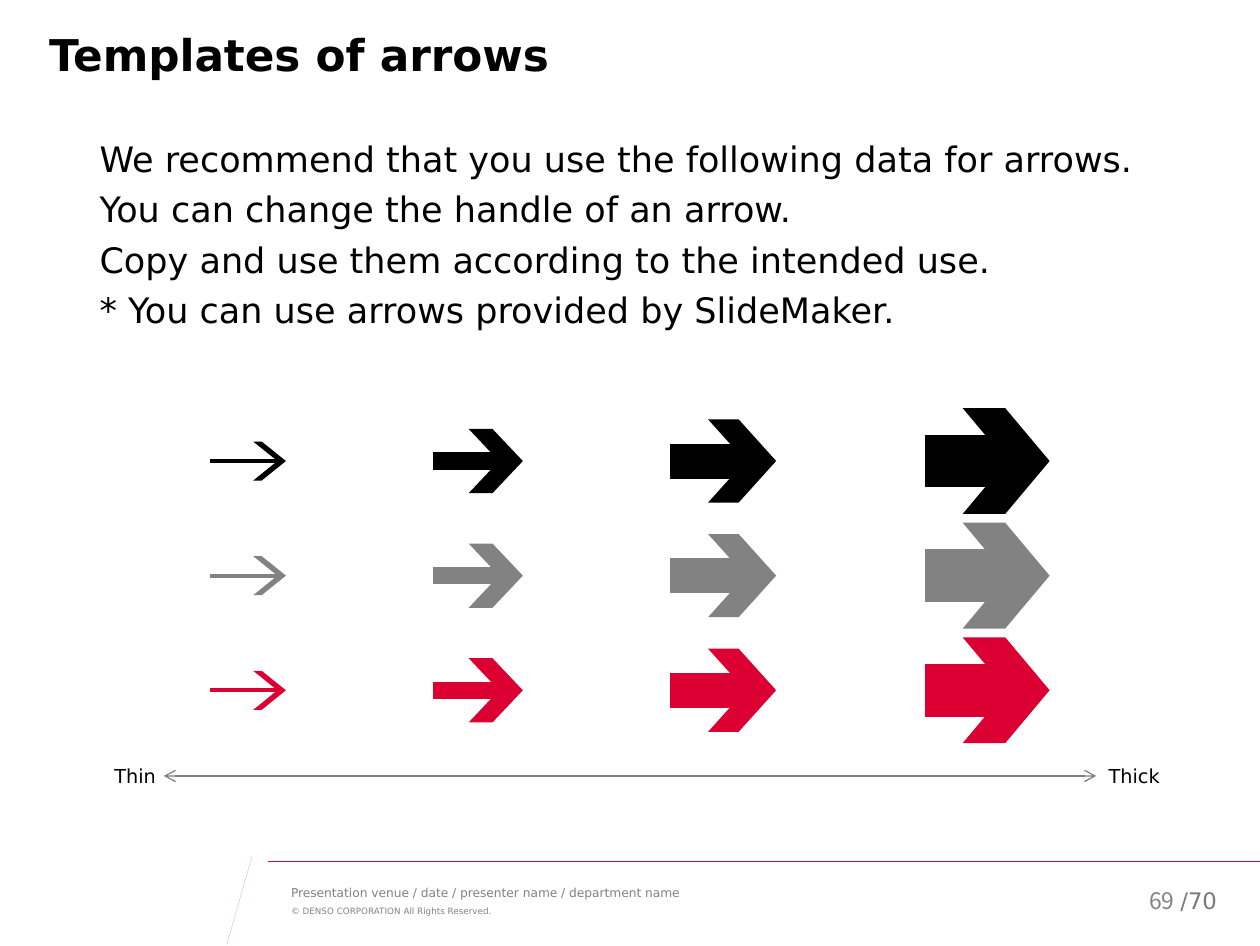
from dataclasses import dataclass

from lxml.etree import SubElement
from pptx import Presentation
from pptx.dml.color import RGBColor
from pptx.enum.shapes import MSO_CONNECTOR, MSO_SHAPE
from pptx.enum.text import MSO_ANCHOR, MSO_AUTO_SIZE, PP_ALIGN
from pptx.oxml.ns import qn
from pptx.util import Inches, Pt


@dataclass(frozen=True)
class Theme:
    font: str = "DejaVu Sans"
    number_font: str = "Noto Sans CJK JP"
    black: RGBColor = RGBColor(0x00, 0x00, 0x00)
    gray: RGBColor = RGBColor(0x82, 0x82, 0x82)
    total_gray: RGBColor = RGBColor(0x79, 0x79, 0x79)
    scale_gray: RGBColor = RGBColor(0x7F, 0x7F, 0x7F)
    red: RGBColor = RGBColor(0xDC, 0x00, 0x32)
    title: int = 25
    body: int = 20
    number: int = 13
    label: int = 11
    footer: int = 7
    rights: int = 5


theme = Theme()
deck = Presentation()
deck.slide_width, deck.slide_height = Inches(10), Inches(7.51)
page = deck.slides.add_slide(deck.slide_layouts[5])

# Grid of square cells, 100 columns across the slide
cell = deck.slide_width / 100
columns, rows = 100, deck.slide_height / cell


def write(box, area, lines, size, color, insets=(1, 0.5, 1, 0.5), font=theme.font,
          bold=False, align=PP_ALIGN.LEFT, anchor=MSO_ANCHOR.TOP, wrap=True, gap=0):
    """Place a text shape on the grid, fill it with lines and format them."""
    box.left, box.top, box.width, box.height = [round(n * cell) for n in area]
    frame = box.text_frame
    frame.text = "\n".join(lines)
    frame.auto_size = MSO_AUTO_SIZE.NONE
    frame.word_wrap = wrap
    frame.vertical_anchor = anchor
    (frame.margin_left, frame.margin_top,
     frame.margin_right, frame.margin_bottom) = [round(n * cell) for n in insets]
    for index, para in enumerate(frame.paragraphs):
        para.alignment = align
        para.space_before = Pt(gap if index else 0)
        for span in para.runs:
            span.font.name, span.font.size = font, Pt(size)
            span.font.bold, span.font.color.rgb = bold, color


def draw_line(start, end, y, color, weight):
    """Draw a horizontal line between two columns."""
    line = page.shapes.add_connector(
        MSO_CONNECTOR.STRAIGHT, *[round(n * cell) for n in (start, y, end, y)])
    line.line.color.rgb, line.line.width = color, Pt(weight)
    SubElement(line._element.spPr, qn("a:effectLst"))
    return line


# Footer rule and slanted bar
draw_line(21.3, columns, 68.4, theme.red, 0.5)
outline = page.shapes.build_freeform(20.5, 68.1, scale=cell)
outline.add_line_segments([(19.9, 68.1), (17.7, rows), (18.3, rows)], close=True)
bar = outline.convert_to_shape()
bar.shadow.inherit = False
bar.fill.solid()
bar.fill.fore_color.rgb = theme.red
bar.line.fill.background()

# Title
write(page.shapes.title, (0, 2.2, columns, 3.9), ["Templates of arrows"],
      theme.title, theme.black, insets=(3.9, 0, 15.7, 0), bold=True)

# Body, scale labels, footer and page number
body = [
    "We recommend that you use the following data for arrows.",
    "You can change the handle of an arrow.",
    "Copy and use them according to the intended use.",
    "* You can use arrows provided by SlideMaker.",
]
venue = ["Presentation venue / date / presenter name / department name"]
rights = ["© DENSO CORPORATION All Rights Reserved."]
flush = {"insets": (0, 0, 0, 0)}
middle = {"anchor": MSO_ANCHOR.MIDDLE}
texts = [
    ((0, 10.4, columns, 53.8), body, theme.body, theme.black,
     {"insets": (7.9, 0.5, 7.1, 0.5), "gap": 4.8}),
    ((8.1, 60.2, 5.4, 2.9), ["Thin"], theme.label, theme.black, {"wrap": False}),
    ((87, 60.2, 6.1, 2.9), ["Thick"], theme.label, theme.black, {"wrap": False}),
    ((23.1, 70.3, 62.8, 1.2), venue, theme.footer, theme.gray, flush),
    ((23.1, 71.9, 62.8, 0.8), rights, theme.rights, theme.gray, flush),
    ((83.4, 69.5, 11.2, 4), ["69 "], theme.number, theme.gray,
     {"font": theme.number_font, "align": PP_ALIGN.RIGHT, **middle}),
    ((92.7, 69.9, 5.2, 3.2), ["/70"], theme.number, theme.total_gray,
     {"wrap": False, **middle}),
]
for area, lines, size, color, options in texts:
    write(page.shapes.add_textbox(0, 0, 0, 0), area, lines, size, color, **options)

# Scale from thin to thick, with an arrowhead at each end
scale_line = draw_line(13, 87, 61.6, theme.scale_gray, 0.75)
for end in ("a:headEnd", "a:tailEnd"):
    SubElement(scale_line.line._get_or_add_ln(), qn(end), type="arrow")

# Arrows: one row per colour, one column per thickness
# (shaft start, shaft end, weight, head left, head width, head height, notch)
arrows = [
    (16.7, 22.2, 2.25, 20.1, 2.6, 3.1, 0.74),
    (34.4, 39.9, 10, 37.2, 4.3, 5.1, 0.56),
    (53.2, 59.4, 20, 56.2, 5.4, 6.6, 0.55),
    (73.4, 81, 30, 76.4, 6.9, 8.4, 0.51),
]
first_row, row_step = 36.6, 9.1
for index, color in enumerate((theme.black, theme.gray, theme.red)):
    y = first_row + index * row_step
    for start, end, weight, left, width, height, notch in arrows:
        draw_line(start, end, y, color, weight)
        head = page.shapes.add_shape(
            MSO_SHAPE.CHEVRON,
            *[round(n * cell) for n in (left, y - height / 2, width, height)])
        head.adjustments[0] = notch
        head.shadow.inherit = False
        head.fill.solid()
        head.fill.fore_color.rgb = color
        head.line.fill.background()

deck.save("out.pptx")
